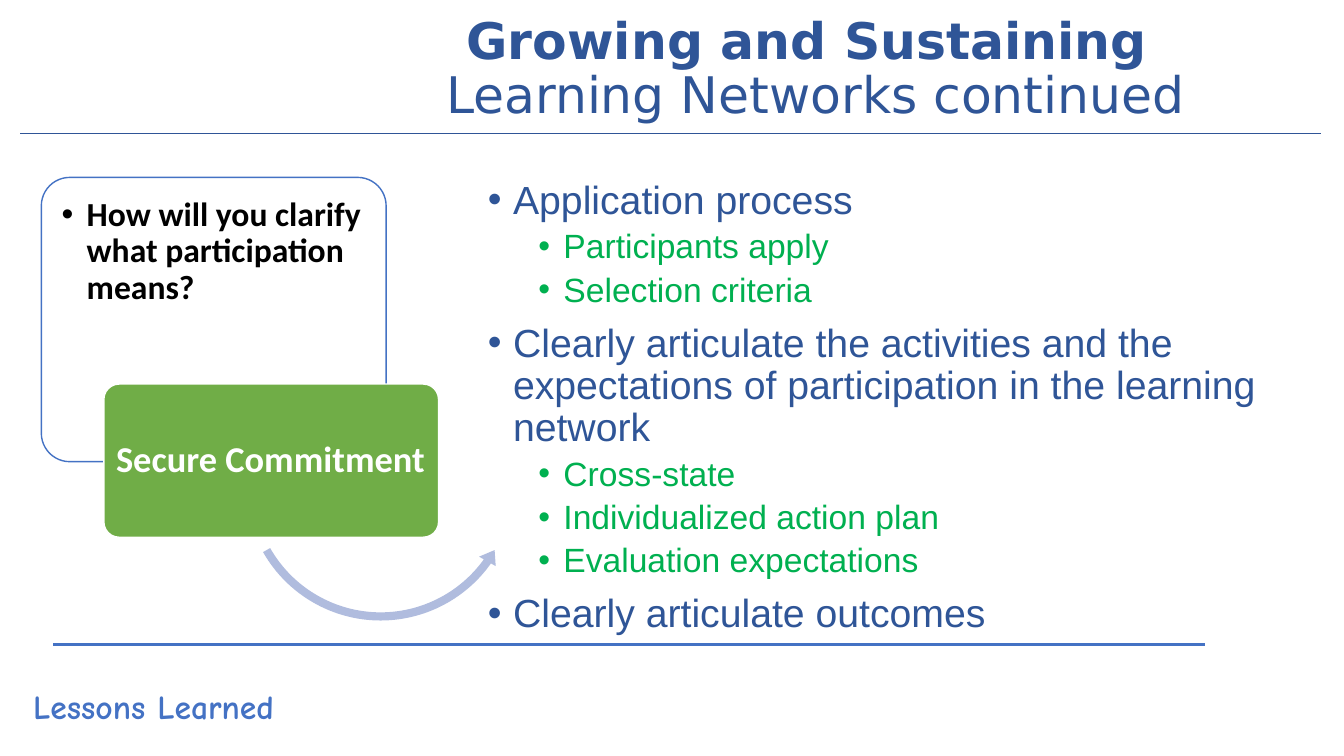
from dataclasses import dataclass
from lxml.etree import SubElement
from pptx import Presentation
from pptx.dml.color import RGBColor
from pptx.enum.shapes import MSO_CONNECTOR, MSO_SHAPE
from pptx.enum.text import MSO_ANCHOR, PP_ALIGN
from pptx.oxml.ns import qn
from pptx.util import Inches, Pt


@dataclass(frozen=True)
class Theme:
    navy: str = "2F5597"
    blue: str = "4472C4"
    leaf: str = "70AD47"
    green: str = "00B050"
    pale: str = "B0BCDE"
    white: str = "FFFFFF"
    black: str = "000000"
    title: int = 36
    main: int = 28
    card: int = 26
    sub: int = 24


theme = Theme()


def add_box(place, inset=(0.1, 0.05), anchor=MSO_ANCHOR.TOP):
    frame = slide.shapes.add_textbox(*map(Inches, place)).text_frame
    frame.word_wrap = True
    frame.vertical_anchor = anchor
    frame.margin_left = frame.margin_right = Inches(inset[0])
    frame.margin_top = frame.margin_bottom = Inches(inset[1])
    return frame


def add_text(para, text, face, size, color, bold=False, indent=None):
    if indent is not None:
        props = para._p.get_or_add_pPr()
        props.set("marL", str(Inches(indent)))
        props.set("indent", str(Inches(-0.25)))
        SubElement(props, qn("a:buFont"), typeface="Arial")
        SubElement(props, qn("a:buChar"), char="•")
    run = para.add_run()
    run.text = text
    font = run.font
    font.name, font.size, font.bold = face, Pt(size), bold
    font.color.rgb = RGBColor.from_string(color)


deck = Presentation()
deck.slide_width, deck.slide_height = Inches(13.33), Inches(7.5)
slide = deck.slides.add_slide(deck.slide_layouts[6])

rules = [
    (0.2, 13.1, 1.32, theme.navy, 0.75),
    (0.53, 11.95, 6.39, theme.blue, 2.25),
]
for left, right, top, color, width in rules:
    rule = slide.shapes.add_connector(
        MSO_CONNECTOR.STRAIGHT, Inches(left), Inches(top), Inches(right), Inches(top))
    rule.line.color.rgb = RGBColor.from_string(color)
    rule.line.width = Pt(width)
    SubElement(rule._element.spPr, qn("a:effectLst"))

title = add_box((3.06, 0.22, 10.06, 0.95), anchor=MSO_ANCHOR.MIDDLE).paragraphs[0]
title.alignment = PP_ALIGN.CENTER
title.line_spacing = 0.9
add_text(title, "Growing and Sustaining ", "DejaVu Sans", theme.title, theme.navy, True)
title.add_line_break()
add_text(title, "Learning Networks continued", "DejaVu Sans", theme.title, theme.navy)

shapes = [
    (MSO_SHAPE.ROUNDED_RECTANGLE, (0.41, 1.76, 3.42, 2.82), [0.1], None, theme.blue),
    (MSO_SHAPE.ROUNDED_RECTANGLE, (1.03, 3.81, 3.32, 1.52), [0.1], theme.leaf, theme.white),
    (MSO_SHAPE.LEFT_CIRCULAR_ARROW, (2.38, 3.42, 2.79, 2.79),
     [0.029, 3.519, 21.274, 90.245, 0.034], theme.pale, None),
]
for kind, place, adjust, fill, line in shapes:
    shape = slide.shapes.add_shape(kind, *map(Inches, place))
    shape.shadow.inherit = False
    for index, value in enumerate(adjust):
        shape.adjustments[index] = value
    if fill:
        shape.fill.solid()
        shape.fill.fore_color.rgb = RGBColor.from_string(fill)
    else:
        shape.fill.background()
    if line:
        shape.line.color.rgb = RGBColor.from_string(line)
        shape.line.width = Pt(1)
    else:
        shape.line.fill.background()

query = add_box((0.47, 1.82, 3.29, 2.09), (0.14, 0.14)).paragraphs[0]
query.line_spacing = 0.9
add_text(query, "How will you clarify what participation means?",
         "Calibri", theme.sub, theme.black, True, 0.25)

label = add_box((1.07, 3.86, 3.23, 1.43), (0.05, 0.04), MSO_ANCHOR.MIDDLE).paragraphs[0]
label.alignment = PP_ALIGN.CENTER
label.line_spacing = 0.9
add_text(label, "Secure Commitment", "Calibri", theme.card, theme.white, True)

points = [
    (0, "Application process"),
    (1, "Participants apply"),
    (1, "Selection criteria"),
    (0, "Clearly articulate the activities and the expectations of participation "
        "in the learning network"),
    (1, "Cross-state"),
    (1, "Individualized action plan"),
    (1, "Evaluation expectations"),
    (0, "Clearly articulate outcomes"),
]
styles = [(theme.main, theme.navy, 0.25, 10), (theme.sub, theme.green, 0.75, 5)]
body = add_box((4.74, 1.74, 8.38, 4.65))
for index, (level, text) in enumerate(points):
    size, color, indent, space = styles[level]
    para = body.add_paragraph() if index else body.paragraphs[0]
    para.level = level
    para.line_spacing = 0.9
    para.space_before = Pt(space if index else 0)
    add_text(para, text, "Arial", size, color, indent=indent)

footer = add_box((0.23, 6.76, 2.69, 0.5)).paragraphs[0]
add_text(footer, "Lessons Learned", "Comic Neue", theme.sub, theme.blue, True)

deck.save("out.pptx")
